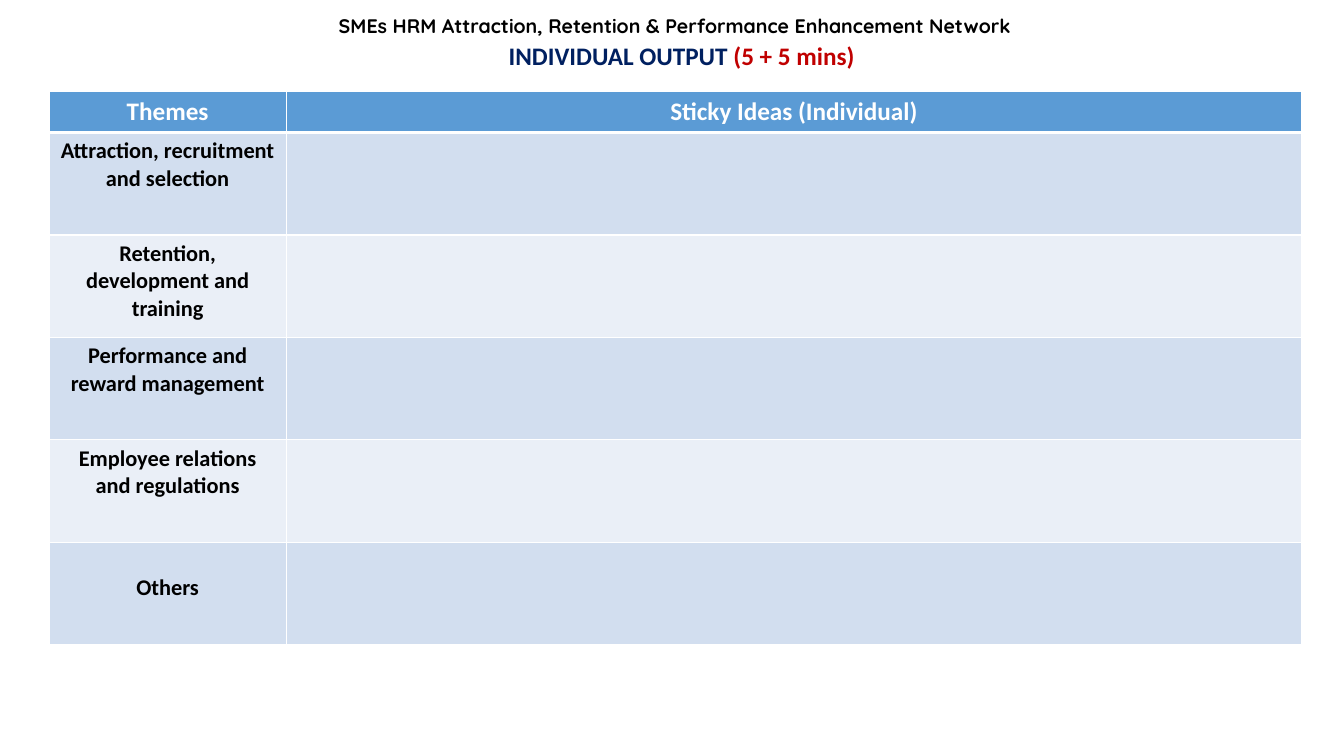
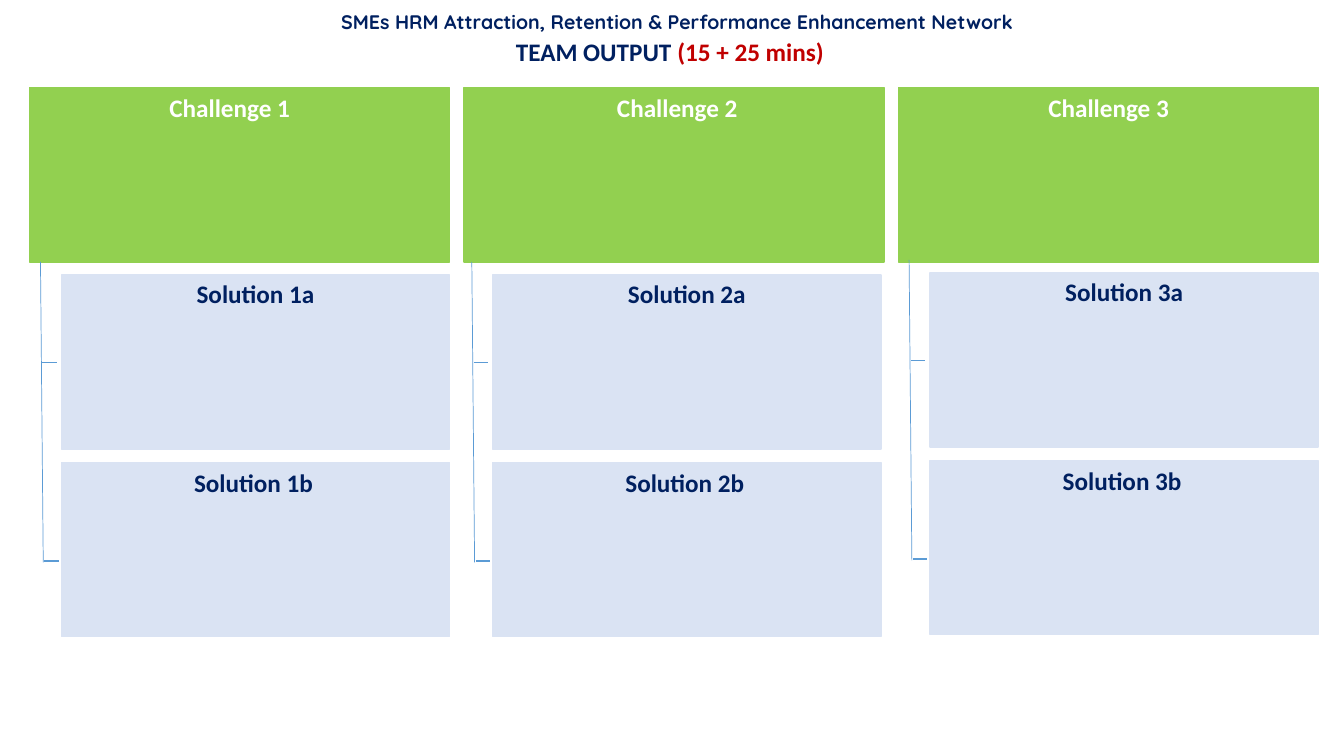
from lxml.etree import SubElement
from pptx import Presentation
from pptx.dml.color import RGBColor
from pptx.enum.shapes import MSO_CONNECTOR, MSO_SHAPE
from pptx.enum.text import MSO_ANCHOR, MSO_AUTO_SIZE, PP_ALIGN
from pptx.oxml.ns import qn
from pptx.util import Cm, Pt

NAVY, RED, BLACK, WHITE = "002060", "C00000", "000000", "FFFFFF"
BLUE, GREEN, PALE_BLUE = "5B9BD5", "92D050", "DAE3F3"
BANDS = ("D2DEEF", "EAEFF7")
BODY_FONT, TITLE_FONT = "Calibri", "Quicksand"
NETWORK = "SMEs HRM Attraction, Retention & Performance Enhancement Network"
THEMES = (
    "Attraction, recruitment and selection",
    "Retention, development and training",
    "Performance and reward management",
    "Employee relations and regulations",
    "Others",
)


def rgb(value):
    """Turn a hex string into a colour."""
    return RGBColor.from_string(value)


def write(paragraph, text, *, size=18, color=NAVY, font=BODY_FONT, align=PP_ALIGN.CENTER):
    """Add one bold run to a paragraph."""
    paragraph.alignment = align
    run = paragraph.add_run()
    run.text = text
    run.font.name, run.font.size, run.font.bold = font, Pt(size), True
    run.font.color.rgb = rgb(color)


def border(cell, **widths):
    """Draw white cell borders, given as L, R, T and B widths in points."""
    properties = cell._tc.get_or_add_tcPr()
    for side in "LRTB":
        edge = SubElement(properties, qn(f"a:ln{side}"), w=str(Pt(widths.get(side, 1))))
        paint = SubElement(edge, qn("a:solidFill"))
        SubElement(paint, qn("a:srgbClr"), val=WHITE)


class Deck:
    """Hold the shared style and the slide being built."""

    def __init__(self):
        """Open an empty widescreen deck."""
        self.presentation = Presentation()
        self.presentation.slide_width = Cm(33.87)
        self.presentation.slide_height = Cm(19.05)
        self.slide = None

    def new_slide(self, left, top, color):
        """Start a slide headed by the network name."""
        self.slide = self.presentation.slides.add_slide(self.presentation.slide_layouts[5])
        title = self.slide.shapes.title
        title.left, title.top, title.width, title.height = Cm(left), Cm(top), Cm(20.17), Cm(0.79)
        frame = title.text_frame
        frame.auto_size = MSO_AUTO_SIZE.NONE
        frame.vertical_anchor = MSO_ANCHOR.MIDDLE
        frame.paragraphs[0].line_spacing = 0.9
        write(frame.paragraphs[0], NETWORK, size=14, color=color, font=TITLE_FONT)

    def text_line(self, left, top, width):
        """Add a one-line text box and return its paragraph."""
        frame = self.slide.shapes.add_textbox(Cm(left), Cm(top), Cm(width), Cm(1.02)).text_frame
        frame.word_wrap = True
        return frame.paragraphs[0]

    def activity(self, left, top, name, minutes):
        """Add the activity name with its time allowance."""
        heading = self.text_line(left, top, 9.47)
        write(heading, f"{name} ", align=PP_ALIGN.LEFT)
        write(heading, f"({minutes} mins)", color=RED, align=PP_ALIGN.LEFT)

    def label(self, center, top, text, color=NAVY):
        """Add a label centred on a horizontal position."""
        width = 4
        write(self.text_line(center - width / 2, top, width), text, color=color)

    def panel(self, left, top, width, color):
        """Add a plain rectangle to write in."""
        panel = self.slide.shapes.add_shape(
            MSO_SHAPE.RECTANGLE, Cm(left), Cm(top), Cm(width), Cm(4.39))
        panel.shadow.inherit = False
        panel.fill.solid()
        panel.fill.fore_color.rgb = panel.line.color.rgb = rgb(color)
        panel.line.width = Pt(1)

    def line(self, x1, y1, x2, y2, weight=1):
        """Add a thin blue line."""
        line = self.slide.shapes.add_connector(
            MSO_CONNECTOR.STRAIGHT, Cm(x1), Cm(y1), Cm(x2), Cm(y2))
        line.line.color.rgb = rgb(BLUE)
        line.line.width = Pt(weight)
        SubElement(line._element.spPr, qn("a:effectLst"))

    def ideas_table(self, headings, themes):
        """Add the table with a header and one empty row per theme."""
        widths = (5.97, 25.6)
        heights = [1.03] + [2.58] * len(themes)
        table = self.slide.shapes.add_table(
            len(heights), len(widths), Cm(1.24), Cm(2.31), Cm(sum(widths)), Cm(sum(heights))).table
        for column, width in zip(table.columns, widths):
            column.width = Cm(width)
        contents = [headings] + [(theme, "") for theme in themes]
        for index, (texts, height) in enumerate(zip(contents, heights)):
            table.rows[index].height = Cm(height)
            is_header = index == 0
            for cell, text in zip(table.rows[index].cells, texts):
                border(cell, T=3 if index == 1 else 1, B=3 if is_header else 1)
                cell.fill.solid()
                cell.fill.fore_color.rgb = rgb(BLUE if is_header else BANDS[(index - 1) % 2])
                if text:
                    write(cell.text_frame.paragraphs[0], text, size=18 if is_header else 16,
                          color=WHITE if is_header else BLACK)
        table.cell(len(themes), 0).margin_top = Cm(0.81)

    def challenge(self, number, left, label_center):
        """Add a challenge panel with its label."""
        top = 2.21
        self.panel(left, top, 10.59, GREEN)
        self.label(label_center, top, f"Challenge {number}", WHITE)

    def solutions(self, number, left, top):
        """Add the two solutions of a challenge with their branch lines."""
        width, pitch = 9.78, 4.72
        center = left + width / 2
        for row in range(2):
            self.panel(left, top + row * pitch, width, PALE_BLUE)
        self.line(left - 0.53, top - 0.33, left - 0.46, top + 7.24, 0.5)
        for start, drop in ((0.48, 2.21), (0.43, 7.21)):
            self.line(left - start, top + drop, left - start + 0.36, top + drop)
        self.label(center, top - 0.05, f"Solution {number}a")
        self.label(center - 0.05, top + pitch, f"Solution {number}b")


def individual_slide(deck):
    """Build the individual output slide."""
    deck.new_slide(6.93, 0.3, BLACK)
    deck.ideas_table(("Themes", "Sticky Ideas (Individual)"), THEMES)
    deck.activity(12.57, 0.89, "INDIVIDUAL OUTPUT", "5 + 5")


def team_slide(deck):
    """Build the team output slide."""
    deck.new_slide(6.99, 0.2, NAVY)
    columns = ((5.79, 1.55, 6.93), (17.07, 12.42, 6.93), (27.94, 23.44, 6.88))
    for index, (label_center, solution_left, solution_top) in enumerate(columns):
        deck.challenge(index + 1, 0.74 + index * 10.95, label_center)
        deck.solutions(index + 1, solution_left, solution_top)
    deck.activity(12.75, 0.79, "TEAM OUTPUT", "15 + 25")


def main():
    """Build and save the deck."""
    deck = Deck()
    individual_slide(deck)
    team_slide(deck)
    deck.presentation.save("out.pptx")


if __name__ == "__main__":
    main()
